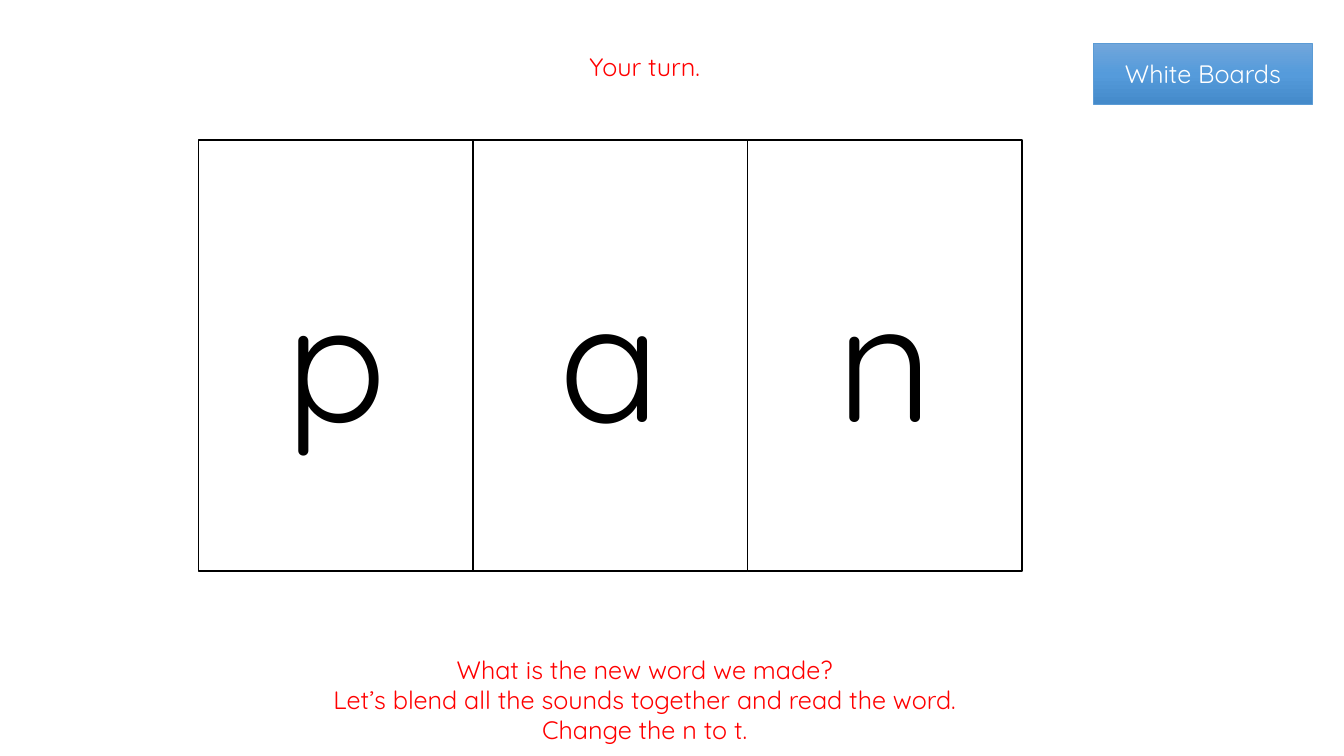
from copy import deepcopy

from pptx import Presentation
from pptx.dml.color import RGBColor as Rgb
from pptx.enum.shapes import MSO_SHAPE as Shape
from pptx.enum.text import MSO_ANCHOR as Anchor, MSO_AUTO_SIZE as Auto, PP_ALIGN as Align
from pptx.oxml.ns import qn
from pptx.util import Pt

FONT = "Quicksand"
HUES = {
    "ink": "000000",
    "paper": "FFFFFF",
    "cue": "FF0000",
    "edge": "5B9BD5",
    "top": "71A6DB",
    "mid": "559BDB",
    "low": "448ACA",
}


def hue(name):
    """Return the named colour."""
    return Rgb.from_string(HUES[name])


def write(frame, lines, size, color, anchor):
    """Fill a text frame with centred lines."""
    frame.word_wrap = True
    frame.auto_size = Auto.NONE
    frame.vertical_anchor = anchor
    for i, line in enumerate(lines):
        para = frame.add_paragraph() if i else frame.paragraphs[0]
        para.alignment = Align.CENTER
        para.line_spacing = 1.0
        run = para.add_run()
        run.text = line
        run.font.name = FONT
        run.font.size = Pt(size)
        run.font.color.rgb = hue(color)


def panel(slide, box, edge, width):
    """Add an outlined rectangle without shadow."""
    shape = slide.shapes.add_shape(Shape.RECTANGLE, *map(Pt, box))
    shape.shadow.inherit = False
    shape.line.color.rgb = hue(edge)
    shape.line.width = Pt(width)
    return shape


def cards(slide, box, word):
    """Split the box into one card per letter."""
    left, top, width, height = box
    step = width / len(word)
    for i, letter in enumerate(word):
        card = panel(slide, (left + i * step, top, step, height), "ink", 1)
        card.fill.solid()
        card.fill.fore_color.rgb = hue("paper")
        write(card.text_frame, [letter], 120, "ink", Anchor.MIDDLE)


def title(slide, box, text):
    """Place the title in the box."""
    head = slide.shapes.title
    head.left, head.top, head.width, head.height = map(Pt, box)
    write(head.text_frame, [text], 18, "cue", Anchor.TOP)


def badge(slide, box, text):
    """Add the label with a three-stop gradient."""
    tag = panel(slide, box, "edge", 0.5)
    tag.fill.gradient()
    tag.fill.gradient_angle = 270
    first = next(tag.element.spPr.iter(qn("a:gs")))
    mid = deepcopy(first)
    mid.set("pos", "50000")
    first.addnext(mid)
    for stop, name in zip(tag.fill.gradient_stops, ("top", "mid", "low")):
        stop.color.rgb = hue(name)
    write(tag.text_frame, [text], 18, "paper", Anchor.MIDDLE)


def prompt(slide, box, lines):
    """Add the questions for the class."""
    note = slide.shapes.add_textbox(*map(Pt, box))
    write(note.text_frame, lines, 18, "cue", Anchor.TOP)


def main():
    """Build and save the slide."""
    deck = Presentation()
    deck.slide_width, deck.slide_height = Pt(960), Pt(540)
    slide = deck.slides.add_slide(deck.slide_layouts[5])
    cards(slide, (141.8, 100, 588.2, 308), "pan")
    title(slide, (76, 33.2, 769, 29), "Your turn.")
    badge(slide, (781, 31, 156.5, 43.5), "White Boards")
    prompt(slide, (76, 463.7, 769, 72.7), [
        "What is the new word we made?",
        "Let’s blend all the sounds together and read the word.",
        "Change the n to t.",
    ])
    deck.save("out.pptx")


if __name__ == "__main__":
    main()
